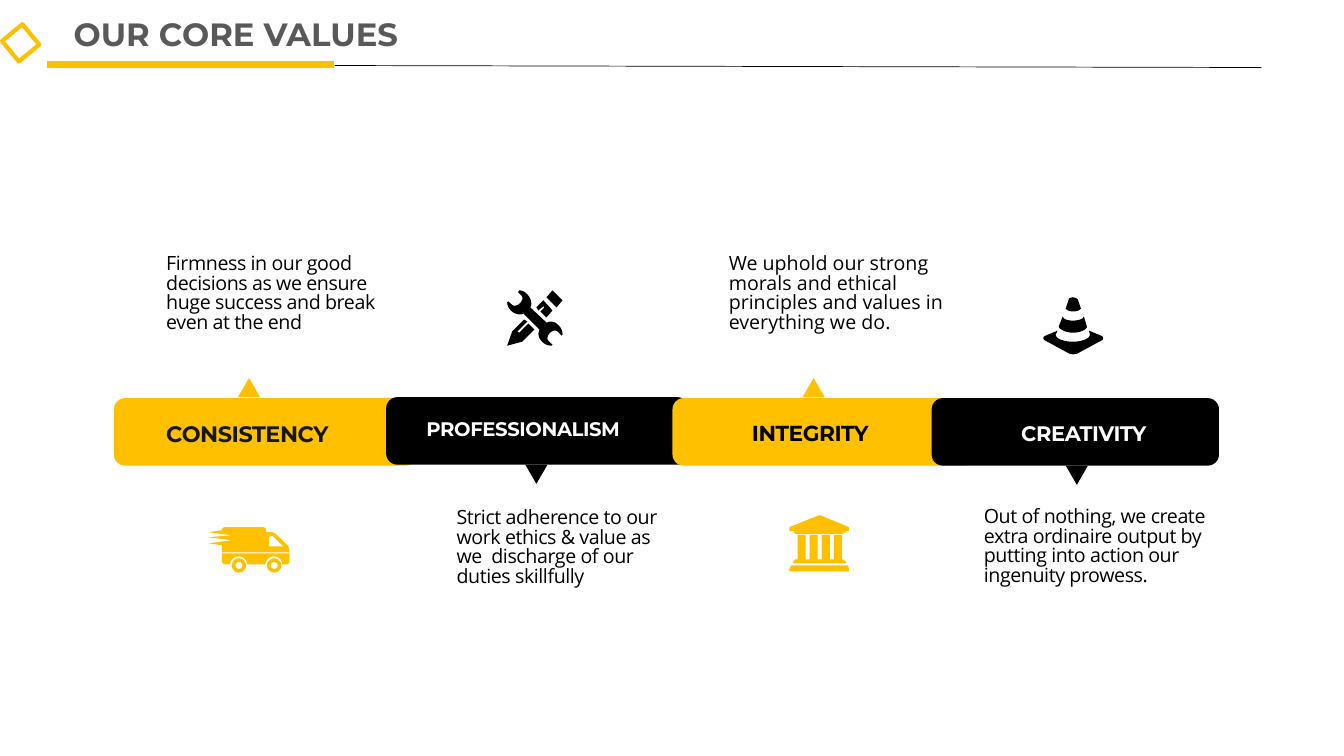
from dataclasses import dataclass
from math import cos, pi, sin
from typing import Any

from lxml.etree import SubElement
from pptx import Presentation
from pptx.dml.color import RGBColor
from pptx.enum.shapes import MSO_CONNECTOR as Connector
from pptx.enum.shapes import MSO_SHAPE as Shape
from pptx.enum.text import MSO_ANCHOR as Anchor
from pptx.enum.text import PP_ALIGN as Align
from pptx.oxml.ns import qn
from pptx.util import Inches, Pt

YELLOW = RGBColor(0xFF, 0xC0, 0x00)
BLACK = RGBColor(0x00, 0x00, 0x00)
WHITE = RGBColor(0xFF, 0xFF, 0xFF)
OFF_WHITE = RGBColor(0xFF, 0xFF, 0xFE)
NEAR_BLACK = RGBColor(0x18, 0x17, 0x17)
GREY = RGBColor(0x59, 0x59, 0x59)

HEADING = "Montserrat"
BODY = "Open Sans"
BAR_HEIGHT = 0.67
POINTER_WIDTH, POINTER_HEIGHT = 0.22, 0.19
UNITS = 1000  # freeform units per inch

# A contour is a list of nodes: two numbers for a corner, six for a cubic curve.
Contour = list[tuple[float, ...]]


@dataclass
class Label:
    text: str
    left: float
    top: float
    width: float
    height: float
    size: float
    color: RGBColor = BLACK
    tight: bool = True


@dataclass
class Value:
    bar_left: float
    bar_top: float
    bar_width: float
    pointer_left: float
    points_up: bool
    color: RGBColor
    name: Label
    caption: Label
    icon: list[list[Contour]]


def circle(x: float, y: float, radius: float, steps: int = 32) -> Contour:
    angles = [2 * pi * step / steps for step in range(steps)]
    return [(x + radius * cos(a), y + radius * sin(a)) for a in angles]


def flatten(contour: Contour, steps: int = 8) -> list[tuple[int, int]]:
    """Turn the cubic curves of a contour into short straight segments."""
    points: list[tuple[float, float]] = []
    for node in contour:
        if len(node) == 2:
            points.append((node[0], node[1]))
            continue
        start = points[-1]
        for step in range(1, steps + 1):
            t = step / steps
            weights = ((1 - t) ** 3, 3 * t * (1 - t) ** 2, 3 * t * t * (1 - t), t ** 3)
            xs, ys = (start[0], *node[::2]), (start[1], *node[1::2])
            points.append((sum(w * x for w, x in zip(weights, xs)),
                           sum(w * y for w, y in zip(weights, ys))))
    return [(round(x * UNITS), round(y * UNITS)) for x, y in points]


def paint(shape: Any, color: RGBColor) -> None:
    shape.shadow.inherit = False
    shape.fill.solid()
    shape.fill.fore_color.rgb = color
    shape.line.fill.background()


def add_preset(slide: Any, kind: Shape, left: float, top: float,
               width: float, height: float, color: RGBColor) -> Any:
    shape = slide.shapes.add_shape(kind, Inches(left), Inches(top), Inches(width), Inches(height))
    paint(shape, color)
    return shape


def add_outline(slide: Any, contours: list[Contour], color: RGBColor) -> None:
    first, *others = [flatten(contour) for contour in contours]
    builder = slide.shapes.build_freeform(*first[0], scale=Inches(1) / UNITS)
    builder.add_line_segments(first[1:], close=True)
    for points in others:
        builder.move_to(*points[0])
        builder.add_line_segments(points[1:], close=True)
    paint(builder.convert_to_shape(), color)


def format_font(font: Any, color: RGBColor, **values: Any) -> None:
    for name, value in values.items():
        setattr(font, name, value)
    font.color.rgb = color


def add_label(slide: Any, label: Label, font_name: str, bold: bool, line_spacing: Any = None) -> None:
    box = slide.shapes.add_textbox(Inches(label.left), Inches(label.top),
                                   Inches(label.width), Inches(label.height))
    box.text_frame.word_wrap = True
    paragraph = box.text_frame.paragraphs[0]
    paragraph.line_spacing = line_spacing
    run = paragraph.add_run()
    run.text = label.text
    format_font(run.font, label.color, name=font_name, size=Pt(label.size), bold=bold)
    if label.tight:
        run._r.get_or_add_rPr().set("spc", "-30")


def add_value(slide: Any, value: Value) -> None:
    add_preset(slide, Shape.ROUNDED_RECTANGLE, value.bar_left, value.bar_top,
               value.bar_width, BAR_HEIGHT, value.color)
    pointer_top = value.bar_top + (-0.2 if value.points_up else BAR_HEIGHT)
    pointer = add_preset(slide, Shape.ISOSCELES_TRIANGLE, value.pointer_left, pointer_top,
                         POINTER_WIDTH, POINTER_HEIGHT, value.color)
    pointer.rotation = 0 if value.points_up else 180
    for contours in value.icon:
        add_outline(slide, contours, value.color)
    add_label(slide, value.name, HEADING, True)
    add_label(slide, value.caption, BODY, False, Pt(14))


def add_header(slide: Any) -> None:
    title = slide.shapes.title
    title.left, title.top, title.width, title.height = map(Inches, (0.63, 0.07, 4.05, 0.52))
    title.text_frame.text = "OUR CORE VALUES"
    title.text_frame.vertical_anchor = Anchor.MIDDLE
    paragraph = title.text_frame.paragraphs[0]
    paragraph.alignment = Align.JUSTIFY
    format_font(paragraph.runs[0].font, GREY, name=HEADING, size=Pt(23), bold=True)

    underline = add_preset(slide, Shape.RECTANGLE, 0.46, 0.6, 2.86, 0.08, YELLOW)
    underline.line.color.rgb = OFF_WHITE
    underline.line.width = Pt(1)
    rule = slide.shapes.add_connector(Connector.STRAIGHT, *map(Inches, (3.32, 0.65, 12.51, 0.67)))
    rule.line.color.rgb = BLACK
    rule.line.width = Pt(0.5)
    SubElement(rule._element.spPr, qn("a:effectLst"))
    diamond = add_preset(slide, Shape.DIAMOND, 0.02, 0.24, 0.37, 0.37, YELLOW)
    diamond.fill.background()
    diamond.line.color.rgb = YELLOW
    diamond.line.width = Pt(3)
    diamond.rotation = 5.6


WHEELS = [circle(x, 5.61, radius) for x in (2.37, 2.72) for radius in (0.07, 0.035)]
CHASSIS = [(2.87, 5.49), (2.87, 5.56), (2.87, 5.58, 2.86, 5.6, 2.84, 5.6), (2.8, 5.6),
           (2.8, 5.55, 2.76, 5.52, 2.72, 5.52), (2.67, 5.52, 2.64, 5.55, 2.63, 5.6), (2.45, 5.6),
           (2.45, 5.55, 2.41, 5.52, 2.37, 5.52), (2.32, 5.52, 2.29, 5.55, 2.28, 5.6), (2.23, 5.6),
           (2.22, 5.6, 2.2, 5.58, 2.2, 5.56), (2.2, 5.49)]
CARGO = [(2.86, 5.42), (2.73, 5.29), (2.7, 5.28), (2.64, 5.28), (2.64, 5.26),
         (2.64, 5.24, 2.62, 5.23, 2.61, 5.23), (2.23, 5.23), (2.22, 5.23, 2.2, 5.24, 2.2, 5.26),
         (2.07, 5.28), (2.3, 5.31), (2.07, 5.33), (2.3, 5.36), (2.07, 5.39), (2.2, 5.41),
         (2.2, 5.48), (2.87, 5.48), (2.87, 5.45)]
CAB_WINDOW = [(2.81, 5.42), (2.67, 5.42), (2.67, 5.33), (2.68, 5.32), (2.71, 5.32)]
TRUCK = [[*WHEELS, CHASSIS, CARGO, CAB_WINDOW]]

PENCIL_TIP = [(5.24, 3.21), (5.15, 3.3), (5.13, 3.29), (5.23, 3.19), (5.2, 3.17), (5.08, 3.29),
              (5.03, 3.43), (5.18, 3.39), (5.3, 3.27)]
PENCIL_SHAFT = [(5.34, 3.08), (5.39, 3.04), (5.4, 3.05), (5.36, 3.09), (5.42, 3.15), (5.48, 3.08),
                (5.39, 2.98), (5.32, 3.05)]
PENCIL_END = [(5.42, 2.95), (5.48, 2.88), (5.58, 2.98), (5.52, 3.05)]
WRENCH = [(5.46, 3.19), (5.45, 3.19, 5.43, 3.2, 5.42, 3.2), (5.26, 3.05),
          (5.27, 3.03, 5.27, 3.02, 5.27, 3.01), (5.27, 2.95, 5.21, 2.88, 5.15, 2.88),
          (5.14, 2.9), (5.19, 2.95, 5.18, 2.94, 5.18, 2.97), (5.18, 2.99, 5.14, 3.03, 5.12, 3.03),
          (5.09, 3.04, 5.09, 3.03, 5.04, 2.99), (5.03, 3), (5.03, 3.06, 5.09, 3.12, 5.16, 3.12),
          (5.17, 3.12, 5.18, 3.12, 5.19, 3.11), (5.35, 3.27), (5.35, 3.29, 5.34, 3.3, 5.34, 3.31),
          (5.34, 3.37, 5.4, 3.43, 5.47, 3.43), (5.48, 3.42), (5.43, 3.37, 5.43, 3.38, 5.43, 3.35),
          (5.43, 3.32, 5.47, 3.28, 5.5, 3.28), (5.53, 3.28, 5.53, 3.29, 5.57, 3.33),
          (5.58, 3.32), (5.58, 3.25, 5.52, 3.19, 5.46, 3.19)]
TOOLS = [[PENCIL_TIP], [PENCIL_SHAFT], [PENCIL_END], [WRENCH]]

ROOF = [(8.42, 5.23), (8.42, 5.27), (8.39, 5.27), (8.36, 5.3), (7.89, 5.3), (7.87, 5.27),
        (7.83, 5.27), (7.83, 5.23), (8.13, 5.11)]
COLUMNS = [[(x, 5.31), (x + 0.08, 5.31), (x + 0.08, 5.55), (x, 5.55)]
           for x in (7.91, 8.03, 8.15, 8.27)]
FLOOR = [(7.89, 5.55), (8.36, 5.55), (8.39, 5.57), (8.39, 5.59), (7.87, 5.59), (7.87, 5.57)]
STEP = [(7.85, 5.61), (8.41, 5.61), (8.42, 5.64), (8.42, 5.67), (7.83, 5.67), (7.83, 5.64)]
TEMPLE = [[ROOF, *COLUMNS, FLOOR, STEP]]

CONE_BASE = [(10.92, 3.33), (10.8, 3.28), (10.81, 3.32), (10.81, 3.36, 10.73, 3.39, 10.64, 3.39),
             (10.55, 3.39, 10.47, 3.36, 10.47, 3.32), (10.49, 3.28), (10.37, 3.33),
             (10.34, 3.34, 10.34, 3.37, 10.37, 3.38), (10.59, 3.5),
             (10.62, 3.52, 10.67, 3.52, 10.7, 3.5), (10.92, 3.38),
             (10.95, 3.37, 10.95, 3.34, 10.92, 3.33)]
CONE_TOP = [(10.64, 3.09), (10.68, 3.09, 10.71, 3.08, 10.72, 3.06), (10.69, 2.97),
            (10.68, 2.96, 10.66, 2.95, 10.64, 2.95), (10.62, 2.95, 10.6, 2.96, 10.6, 2.97),
            (10.57, 3.06), (10.58, 3.08, 10.61, 3.09, 10.64, 3.09)]
CONE_BAND = [(10.64, 3.3), (10.72, 3.3, 10.78, 3.27, 10.78, 3.24), (10.75, 3.14),
             (10.74, 3.17, 10.69, 3.18, 10.64, 3.18), (10.59, 3.18, 10.55, 3.17, 10.54, 3.14),
             (10.5, 3.24), (10.51, 3.27, 10.57, 3.3, 10.64, 3.3)]
CONE = [[CONE_BASE, CONE_TOP, CONE_BAND]]

VALUES = [
    Value(1.13, 3.95, 3, 2.36, True, YELLOW,
          Label("CONSISTENCY", 1.55, 4.12, 2.29, 0.37, 16, NEAR_BLACK),
          Label("Firmness in our good decisions as we ensure huge success and break even at the end",
                1.55, 2.48, 2.38, 0.89, 14), TRUCK),
    Value(3.83, 3.94, 3, 5.21, False, BLACK,
          Label("PROFESSIONALISM", 4.13, 4.09, 2.29, 0.34, 14, WHITE),
          Label("Strict adherence to our work ethics & value as we  discharge of our duties skillfully",
                4.43, 5, 2.39, 0.89, 14), TOOLS),
    Value(6.67, 3.95, 3, 7.96, True, YELLOW,
          Label("INTEGRITY", 7.36, 4.12, 1.6, 0.36, 15.5),
          Label("We uphold our strong morals and ethical principles and values in everything we do.",
                7.13, 2.48, 2.54, 0.89, 14, tight=False), TEMPLE),
    Value(9.24, 3.95, 2.85, 10.57, False, BLACK,
          Label("CREATIVITY", 10.03, 4.12, 1.91, 0.35, 15, WHITE),
          Label("Out of nothing, we create extra ordinaire output by putting into action our "
                "ingenuity prowess.", 9.66, 4.99, 2.85, 0.89, 14), CONE),
]


def main() -> None:
    presentation = Presentation()
    presentation.slide_width, presentation.slide_height = Inches(13.33), Inches(7.5)
    slide = presentation.slides.add_slide(presentation.slide_layouts[5])
    for value in VALUES:
        add_value(slide, value)
    add_header(slide)
    presentation.save("out.pptx")


if __name__ == "__main__":
    main()
